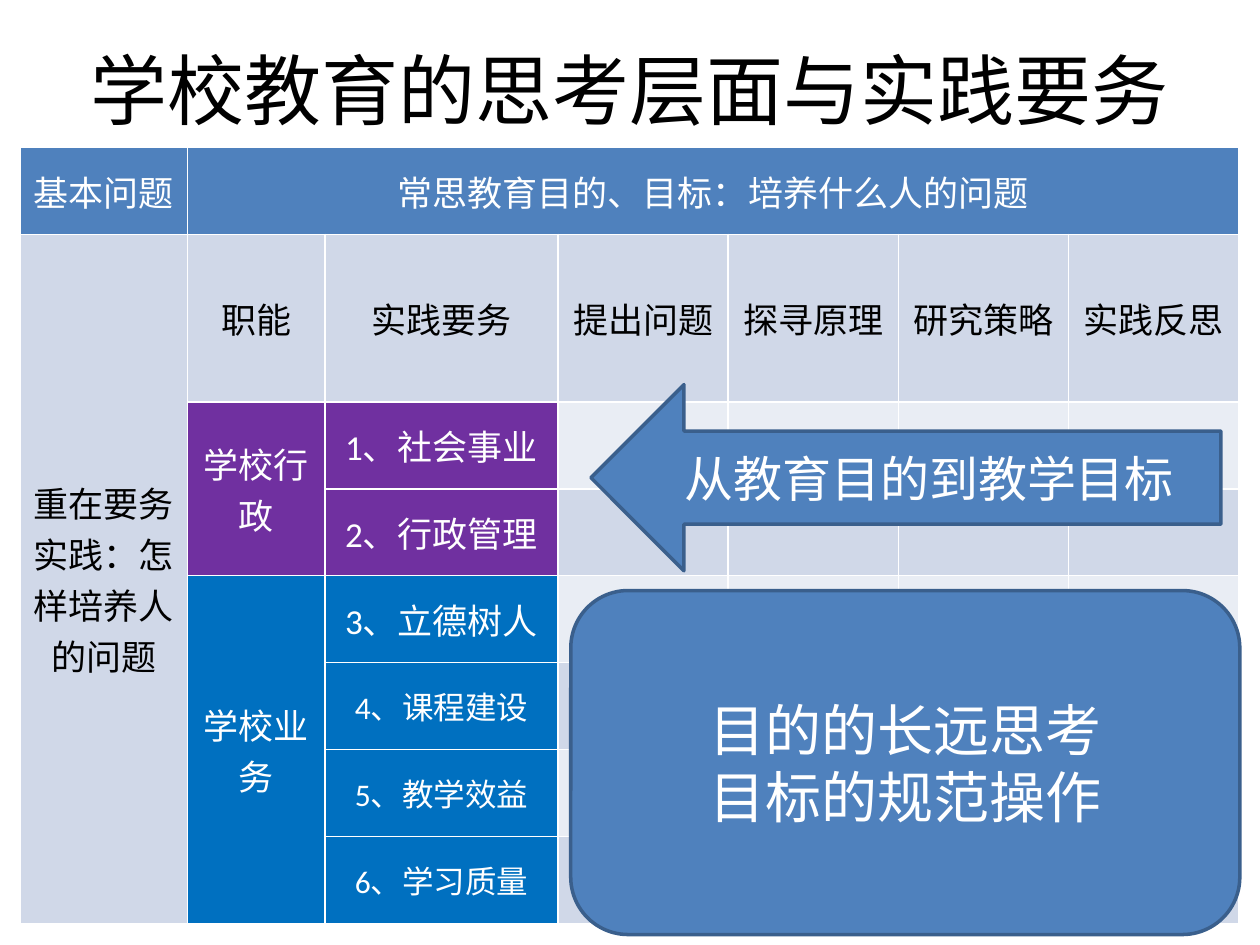
from dataclasses import dataclass

from pptx import Presentation
from pptx.dml.color import RGBColor
from pptx.enum.shapes import MSO_SHAPE as Shape
from pptx.enum.text import MSO_ANCHOR as Anchor, PP_ALIGN as Align
from pptx.util import Inches, Pt

WIDTH, HEIGHT = 10, 7.5
FONT = "Calibri"
WHITE, BLACK = "FFFFFF", "000000"
BLUE, EDGE = "4F81BD", "3A5F8C"
BANDS = ("D0D8E8", "E9EDF4")
PURPLE, AZURE = "7030A0", "0070C0"
COLS = [1.33, 1.09, 1.85] + [1.35] * 4
ROWS = [0.69, 1.33] + [0.69] * 6


@dataclass
class Box:
    x: float
    y: float
    w: float
    h: float

    def place(self) -> tuple:
        return (Inches(self.x * WIDTH), Inches(self.y * HEIGHT),
                Inches(self.w * WIDTH), Inches(self.h * HEIGHT))


@dataclass
class Cell:
    row: int
    col: int
    text: str
    fill: str
    color: str = WHITE
    size: int = 20
    rows: int = 1
    cols: int = 1
    vertical: bool = False


@dataclass
class Callout:
    kind: Shape
    box: Box
    lines: list[str]
    size: int


def rgb(value: str) -> RGBColor:
    return RGBColor.from_string(value)


def paint(target, color: str) -> None:
    target.fill.solid()
    target.fill.fore_color.rgb = rgb(color)


def write(tf, lines: list[str], size: int, color: str) -> None:
    for i, line in enumerate(lines):
        p = tf.add_paragraph() if i else tf.paragraphs[0]
        p.alignment = Align.CENTER
        r = p.add_run()
        r.text = line
        r.font.name = FONT
        r.font.size = Pt(size)
        r.font.bold = False
        r.font.color.rgb = rgb(color)


def add_title(s, box: Box, text: str) -> None:
    sp = s.shapes.title
    sp.left, sp.top, sp.width, sp.height = box.place()
    sp.text_frame.vertical_anchor = Anchor.MIDDLE
    write(sp.text_frame, [text], 44, BLACK)


def add_grid(s, box: Box, cells: list[Cell]) -> None:
    table = s.shapes.add_table(len(ROWS), len(COLS), *box.place()).table
    for col, width in zip(table.columns, COLS):
        col.width = Inches(width)
    for row, height in zip(table.rows, ROWS):
        row.height = Inches(height)
    for i in range(1, len(ROWS)):
        for j in range(len(COLS)):
            paint(table.cell(i, j), BANDS[(i + 1) % 2])
    for c in cells:
        cell = table.cell(c.row, c.col)
        if c.rows * c.cols > 1:
            cell.merge(table.cell(c.row + c.rows - 1, c.col + c.cols - 1))
        paint(cell, c.fill)
        cell.vertical_anchor = Anchor.MIDDLE
        if c.vertical:
            cell._tc.get_or_add_tcPr().set("vert", "eaVert")
        write(cell.text_frame, [c.text], c.size, c.color)


def add_callout(s, c: Callout) -> None:
    sp = s.shapes.add_shape(c.kind, *c.box.place())
    sp.shadow.inherit = False
    paint(sp, BLUE)
    sp.line.color.rgb = rgb(EDGE)
    sp.line.width = Pt(2)
    sp.text_frame.word_wrap = True
    sp.text_frame.vertical_anchor = Anchor.MIDDLE
    write(sp.text_frame, c.lines, c.size, WHITE)


def build_cells() -> list[Cell]:
    cells = [
        Cell(0, 0, "基本问题", BLUE),
        Cell(0, 1, "常思教育目的、目标：培养什么人的问题", BLUE, cols=6),
        Cell(1, 0, "重在要务实践：怎样培养人的问题", BANDS[0], BLACK,
             rows=7, vertical=True),
        Cell(2, 1, "学校行政", PURPLE, rows=2, vertical=True),
        Cell(4, 1, "学校业务", AZURE, rows=4, vertical=True),
    ]
    heads = ["职能", "实践要务", "提出问题", "探寻原理", "研究策略", "实践反思"]
    cells += [Cell(1, j, text, BANDS[0], BLACK) for j, text in enumerate(heads, 1)]
    tasks = ["社会事业", "行政管理", "立德树人", "课程建设", "教学效益", "学习质量"]
    for n, task in enumerate(tasks, 1):
        cells.append(Cell(n + 1, 2, f"{n}、{task}", PURPLE if n <= 2 else AZURE,
                          size=20 if n <= 3 else 18))
    return cells


def main() -> None:
    prs = Presentation()
    prs.slide_width, prs.slide_height = Inches(WIDTH), Inches(HEIGHT)
    s = prs.slides.add_slide(prs.slide_layouts[5])
    add_title(s, Box(0.05, 0.01, 0.9, 1 / 6), "学校教育的思考层面与实践要务")
    add_grid(s, Box(0.016, 0.156, sum(COLS) / WIDTH, sum(ROWS) / HEIGHT),
             build_cells())
    callouts = [
        Callout(Shape.ROUNDED_RECTANGLE, Box(0.453, 0.625, 0.531, 0.364),
                ["目的的长远思考", "目标的规范操作"], 32),
        Callout(Shape.LEFT_ARROW, Box(0.469, 0.407, 0.5, 0.197),
                ["从教育目的到教学目标"], 28),
    ]
    for callout in callouts:
        add_callout(s, callout)
    prs.save("out.pptx")


if __name__ == "__main__":
    main()
